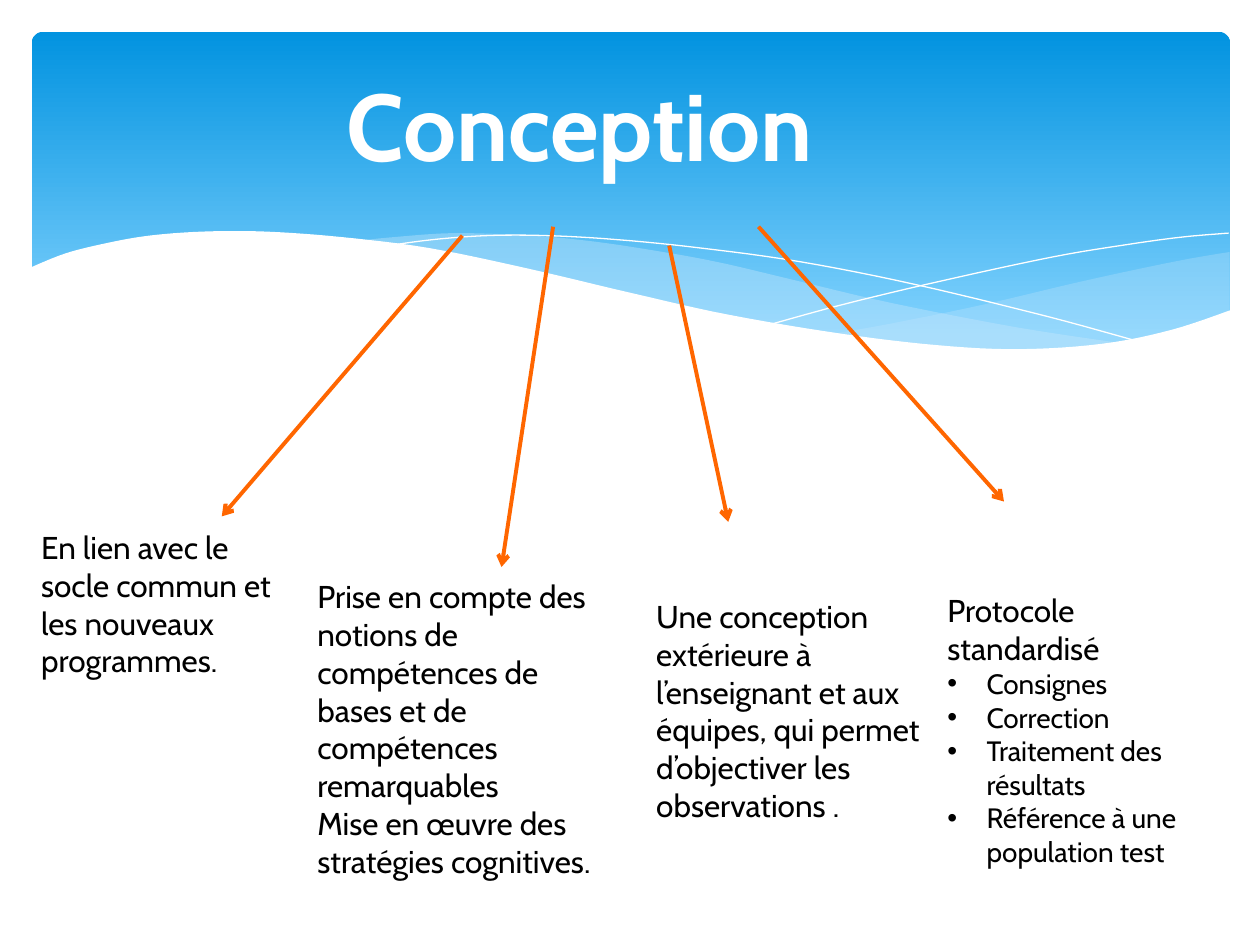
"""Build the "Conception" slide: a wavy blue banner with four arrows to four notes."""
import pptx
import pptx.util
import pptx.dml.color
import pptx.enum.shapes
import pptx.enum.text
import pptx.oxml.ns
from lxml import etree

Cm, Pt, qn = pptx.util.Cm, pptx.util.Pt, pptx.oxml.ns.qn
FONT = "Cabin"
COLORS = {name: pptx.dml.color.RGBColor.from_string(code) for name, code in {
    "deep": "0293E0", "sky": "83D3FE", "mist": "C6E7FC",
    "white": "FFFFFF", "black": "000000", "orange": "FF6600"}.items()}


def smooth(points, steps=6):
    """Return a Catmull-Rom curve through the points."""
    ends = [points[0], *points, points[-1]]
    curve = [points[0]]
    for a, b, c, d in zip(ends, ends[1:], ends[2:], ends[3:]):
        for step in range(1, steps + 1):
            t = step / steps
            curve.append(tuple(
                (2 * q + (r - p) * t + (2 * p - 5 * q + 4 * r - s) * t ** 2
                 + (3 * q - p - 3 * r + s) * t ** 3) / 2
                for p, q, r, s in zip(a, b, c, d)))
    return curve


def trace(points, close):
    """Draw a freeform without shadow through points given in centimetres."""
    dots = [(Cm(x), Cm(y)) for x, y in points]
    pen = slide.shapes.build_freeform(*dots[0])
    pen.add_line_segments(dots[1:], close=close)
    shape = pen.convert_to_shape()
    shape.shadow.inherit = False
    return shape


deck = pptx.Presentation()
deck.slide_width, deck.slide_height = Cm(25.4), Cm(19.05)
slide = deck.slides.add_slide(deck.slide_layouts[5])

band = slide.shapes.add_shape(
    pptx.enum.shapes.MSO_SHAPE.ROUNDED_RECTANGLE, Cm(0.64), Cm(0.64), Cm(24.16), Cm(6.86))
band.adjustments[0] = 0.034
band.shadow.inherit = False
band.line.fill.background()
band.fill.gradient()
band.fill.gradient_angle = 270
for stop, place, color in zip(band.fill.gradient_stops, (0, 0.9), ("deep", "sky")):
    stop.position = place
    stop.color.rgb = COLORS[color]

swells = [
    (29, [(24.79, 5.08), (23.75, 5.26), (21.87, 5.66), (19.79, 6.15), (17.93, 6.53),
          (16.79, 6.73)],
     [(16.79, 6.73), (17.91, 6.88), (19.23, 7.01), (20.4, 7.06), (21.69, 7.01),
      (22.78, 6.86), (23.75, 6.65), (24.79, 6.27)]),
    (40, [(22.68, 6.93), (20.5, 6.6), (17.93, 6.1), (15.98, 5.64), (14.45, 5.28),
          (13.06, 5.03), (11.81, 4.85), (10.67, 4.75), (9.17, 4.7), (7.95, 4.78),
          (7.26, 4.85)],
     [(7.26, 4.85), (8.69, 5.05), (10.26, 5.36), (11.4, 5.64), (13.46, 6.1),
      (15.27, 6.48), (17.27, 6.81), (19, 7.01), (20.5, 7.06), (21.77, 7.04),
      (22.68, 6.93)]),
]
for alpha, top, base in swells:
    swell = trace(smooth(top) + smooth(base), True)
    swell.line.fill.background()
    swell.fill.solid()
    swell.fill.fore_color.rgb = COLORS["mist"]
    tint = swell.fill._xPr.find(".//" + qn("a:srgbClr"))
    etree.SubElement(tint, qn("a:alpha"), val=str(alpha * 1000))

threads = [
    [(7.85, 4.95), (8.74, 4.83), (9.83, 4.75), (11, 4.75), (12.42, 4.83), (14.12, 5),
     (16.15, 5.28), (18.47, 5.74), (21.11, 6.38), (23.04, 6.91)],
    [(15.57, 6.53), (17.07, 6.12), (19, 5.66), (21.23, 5.18), (22.73, 4.93),
     (23.83, 4.78), (24.77, 4.7)],
]
for points in threads:
    thread = trace(smooth(points), False)
    thread.fill.background()
    thread.line.color.rgb = COLORS["white"]
    thread.line.width = Pt(0)

crest = [
    (24.82, 6.25), (23.62, 6.65), (22.23, 6.93), (20.55, 7.04), (18.9, 6.96),
    (16.97, 6.73), (14.71, 6.35), (12.78, 5.92), (10.62, 5.41), (8.64, 5), (6.88, 4.78),
    (5.36, 4.67), (4.09, 4.67), (3.02, 4.75), (2.16, 4.9), (1.32, 5.11), (0.58, 5.41)]
foam = trace(smooth(crest) + [(0.58, 8.36), (24.82, 8.36)], True)
foam.line.fill.background()
foam.fill.solid()
foam.fill.fore_color.rgb = COLORS["white"]

arrows = [
    (9.32, 4.75, 4.47, 10.41), (11.15, 4.57, 10.11, 11.43),
    (13.49, 4.95, 14.68, 10.52), (15.29, 4.57, 20.24, 10.11)]
for ends in arrows:
    arrow = slide.shapes.add_connector(
        pptx.enum.shapes.MSO_CONNECTOR.STRAIGHT, *map(Cm, ends))
    arrow.line.color.rgb = COLORS["orange"]
    arrow.line.width = Pt(2.25)
    etree.SubElement(arrow.line._get_or_add_ln(), qn("a:tailEnd"), type="arrow")
    etree.SubElement(arrow._element.spPr, qn("a:effectLst"))

notes = [
    ((0.58, 10.52, 5.77, 3.33),
     ["En lien avec le socle commun et les nouveaux programmes."], []),
    ((6.15, 11.51, 6.45, 6.4),
     ["Prise en compte des notions de compétences de bases et de compétences remarquables",
      "Mise en œuvre des stratégies cognitives."], []),
    ((12.98, 11.91, 6.63, 4.88),
     ["Une conception extérieure à l’enseignant et aux équipes, "
      "qui permet d’objectiver les observations ."], []),
    ((18.85, 11.79, 5.94, 5.89), ["Protocole standardisé"],
     ["Consignes", "Correction", "Traitement des résultats",
      "Référence à une population test"]),
]
for place, lines, items in notes:
    frame = slide.shapes.add_textbox(*map(Cm, place)).text_frame
    frame.word_wrap = True
    frame.auto_size = pptx.enum.text.MSO_AUTO_SIZE.SHAPE_TO_FIT_TEXT
    frame.text = "\n".join(lines + items)
    for rank, para in enumerate(frame.paragraphs):
        para.font.name = FONT
        para.font.color.rgb = COLORS["black"]
        para.font.size = Pt(18)
        if rank >= len(lines):
            para.font.size = Pt(16)
            props = para._p.get_or_add_pPr()
            props.set("marL", str(Cm(0.79)))
            props.set("indent", str(-Cm(0.79)))
            mark = etree.Element(qn("a:buChar"), char="•")
            props.insert(0, mark)
            mark.addprevious(etree.Element(qn("a:buFont"), typeface="Arial"))

title = slide.shapes.title
title.left, title.top, title.width, title.height = map(Cm, (1.4, 1.19, 20.57, 2.59))
title.text_frame.text = "Conception"
title.text_frame.auto_size = pptx.enum.text.MSO_AUTO_SIZE.NONE
title.text_frame.vertical_anchor = pptx.enum.text.MSO_ANCHOR.MIDDLE
head = title.text_frame.paragraphs[0]
head.alignment = pptx.enum.text.PP_ALIGN.CENTER
head.font.name = FONT
head.font.size = Pt(54)
head.font.bold = True
head.font.color.rgb = COLORS["white"]
slide.shapes._spTree.append(title._element)

deck.save("out.pptx")
